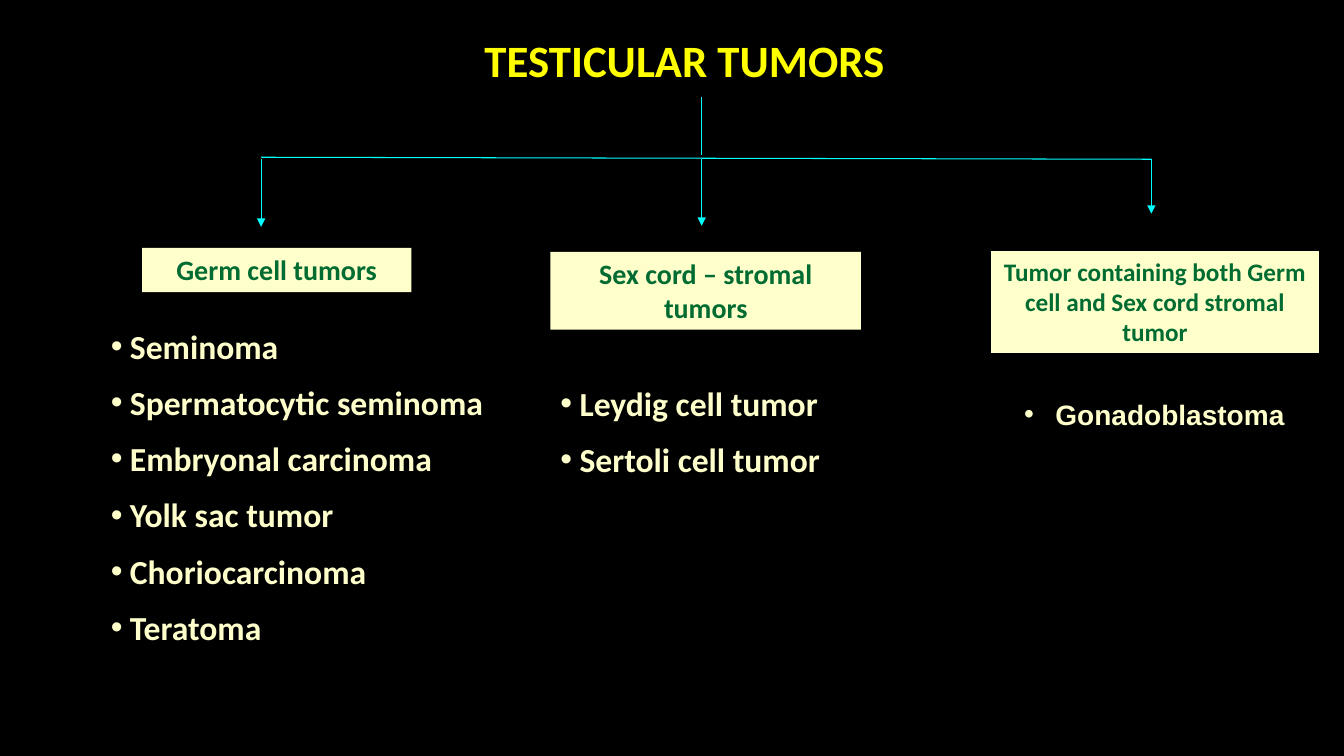
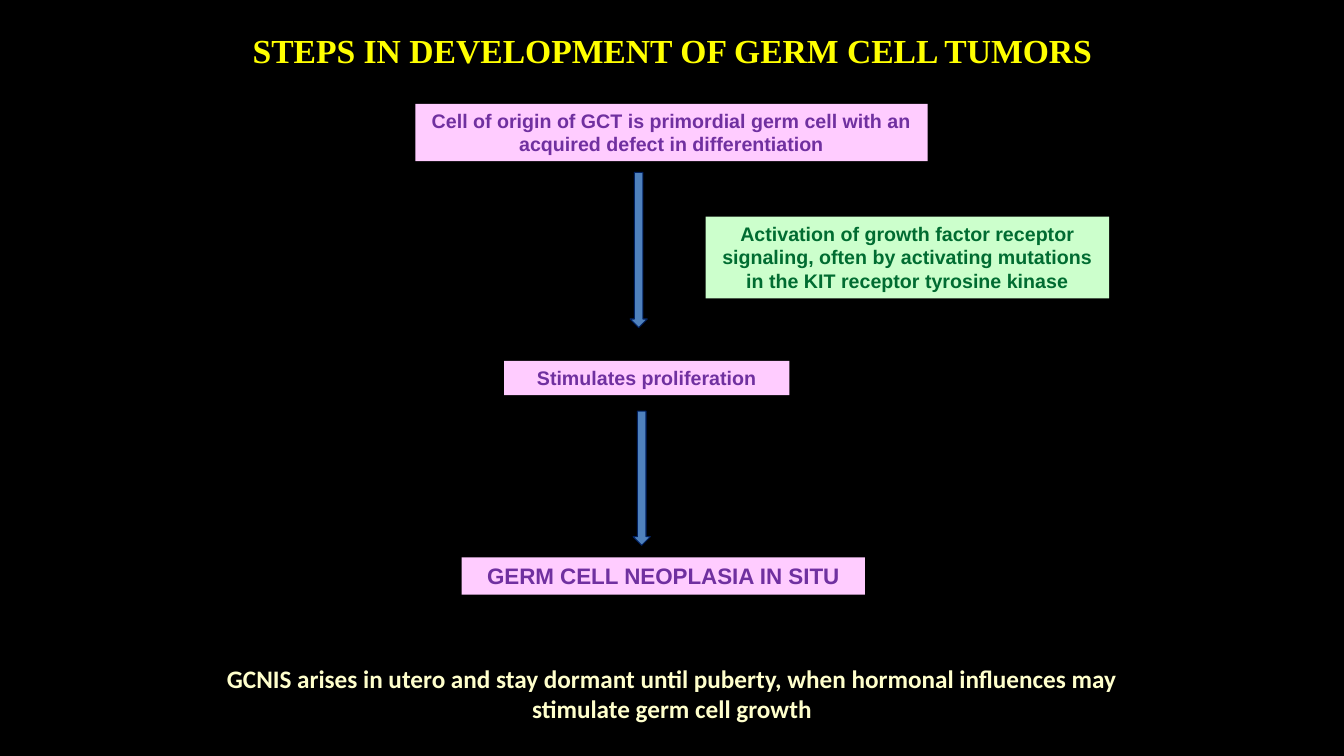
from lxml import etree
from pptx import Presentation
from pptx.dml.color import RGBColor
from pptx.enum.shapes import MSO_CONNECTOR, MSO_SHAPE
from pptx.enum.text import MSO_ANCHOR, MSO_AUTO_SIZE, PP_ALIGN
from pptx.oxml.ns import qn
from pptx.util import Inches, Pt

# Shared palette and fonts
BLACK, YELLOW, CREAM, CYAN = "000000", "FFFF00", "FFFFCC", "00FFFF"
GREEN, MINT, PURPLE, PINK = "006C31", "CCFFCC", "7030A0", "FFCCFF"
BLUE, NAVY = "4F81BD", "002060"
SANS, BODY, SERIF = "Arial", "Calibri", "Times New Roman"
TITLE_ONLY = 5


def rgb(value):
    return RGBColor.from_string(value)


def inches(box):
    return [Inches(v) for v in box]


def add_bullet(p, indent):
    """Give a paragraph a round bullet and a hanging indent."""
    pPr = p._p.get_or_add_pPr()
    pPr.set("marL", str(Inches(indent)))
    pPr.set("indent", str(-Inches(indent)))
    etree.SubElement(pPr, qn("a:buFont")).set("typeface", SANS)
    etree.SubElement(pPr, qn("a:buChar")).set("char", "•")


def write(tf, lines, size=20, font=BODY, color=CREAM, align=PP_ALIGN.CENTER,
          anchor=MSO_ANCHOR.TOP, bullet=None, gap=0, spacing=None):
    """Fill a text frame with bold paragraphs, one per line."""
    tf.word_wrap = True
    tf.auto_size = MSO_AUTO_SIZE.NONE
    tf.vertical_anchor = anchor
    for i, line in enumerate(lines):
        p = tf.add_paragraph() if i else tf.paragraphs[0]
        p.alignment = align
        if i and gap:
            p.space_before = Pt(gap)
        if spacing:
            p.line_spacing = spacing
        if bullet:
            add_bullet(p, bullet)
        r = p.add_run()
        r.text = line
        r.font.size, r.font.name, r.font.bold = Pt(size), font, True
        r.font.color.rgb = rgb(color)


def add_text(slide, box, lines, **fmt):
    write(slide.shapes.add_textbox(*inches(box)).text_frame, lines, **fmt)


def add_shape(slide, kind, box, fill, line=None):
    sp = slide.shapes.add_shape(kind, *inches(box))
    sp.shadow.inherit = False
    sp.fill.solid()
    sp.fill.fore_color.rgb = rgb(fill)
    if line:
        sp.line.color.rgb = rgb(line)
        sp.line.width = Pt(0.75)
    else:
        sp.line.fill.background()
    return sp


def add_label(slide, box, text, fill, **fmt):
    sp = add_shape(slide, MSO_SHAPE.RECTANGLE, box, fill)
    write(sp.text_frame, [text], **fmt)


def add_line(slide, start, end, arrow=False):
    line = slide.shapes.add_connector(MSO_CONNECTOR.STRAIGHT,
                                      *inches(start + end))
    line.line.color.rgb = rgb(CYAN)
    line.line.width = Pt(0.75)
    spPr = line._element.spPr
    if arrow:
        etree.SubElement(spPr.find(qn("a:ln")), qn("a:tailEnd")).set(
            "type", "triangle")
    etree.SubElement(spPr, qn("a:effectLst"))


def add_titled_slide(prs, title, box, **fmt):
    slide = prs.slides.add_slide(prs.slide_layouts[TITLE_ONLY])
    sp = slide.shapes.title
    sp.left, sp.top, sp.width, sp.height = inches(box)
    write(sp.text_frame, [title], color=YELLOW, anchor=MSO_ANCHOR.MIDDLE,
          spacing=0.9, **fmt)
    return slide


def add_branches(slide, left, middle, right, top):
    """Draw a stem, a crossbar and one arrow down to each column."""
    add_line(slide, (left, top - 0.02), (right, top))
    add_line(slide, (middle, top - 0.62), (middle, top - 0.04))
    for x, length in ((left, 0.67), (middle, 0.66), (right, 0.54)):
        add_line(slide, (x, top), (x, top + length), arrow=True)


def build_classification(prs):
    slide = add_titled_slide(prs, "TESTICULAR TUMORS", (2.29, 0, 9, 1.25),
                             size=32)
    add_branches(slide, 2.59, 6.96, 11.42, 1.58)

    # Column headings
    for box, text, size in (
        ((1.41, 2.46, 2.67, 0.44), "Germ cell tumors", 20),
        ((5.46, 2.5, 3.08, 0.77), "Sex cord – stromal tumors", 20),
        ((9.83, 2.49, 3.25, 1.01), "Tumor containing both Germ cell and "
                                   "Sex cord stromal tumor", 18),
    ):
        add_label(slide, box, text, CREAM, size=size, color=GREEN)

    # Tumor types under each heading
    types = dict(size=24, align=PP_ALIGN.LEFT, bullet=0.19, gap=11.4)
    add_text(slide, (1, 3.18, 4.28, 3.53),
             ["Seminoma", "Spermatocytic seminoma", "Embryonal carcinoma",
              "Yolk sac tumor", "Choriocarcinoma", "Teratoma"], **types)
    add_text(slide, (5.46, 3.75, 3.08, 1.11),
             ["Leydig cell tumor", "Sertoli cell tumor"], **types)
    add_text(slide, (10.06, 3.89, 3.02, 0.44), ["Gonadoblastoma"],
             font=SANS, align=PP_ALIGN.LEFT, bullet=0.31)


def build_development(prs):
    slide = add_titled_slide(prs, "STEPS IN DEVELOPMENT OF GERM CELL TUMORS",
                             (2.17, 0.04, 9, 0.96), size=24, font=SERIF)

    # Steps and the side note
    for box, text, size, fill, color in (
        ((4.12, 1.03, 5.08, 0.57),
         "Cell of origin of GCT is primordial germ cell with an acquired "
         "defect in differentiation", 14, PINK, PURPLE),
        ((5, 3.58, 2.83, 0.34), "Stimulates proliferation", 14, PINK, PURPLE),
        ((4.58, 5.53, 4, 0.37), "GERM CELL NEOPLASIA IN SITU", 16, PINK,
         PURPLE),
        ((7, 2.15, 4, 0.81),
         "Activation of growth factor receptor signaling, often by "
         "activating mutations in the KIT receptor tyrosine kinase", 14,
         MINT, GREEN),
    ):
        add_label(slide, box, text, fill, size=size, font=SANS, color=color)

    # Arrows between steps
    for box in ((6.25, 1.71, 0.17, 1.54), (6.28, 4.08, 0.17, 1.33)):
        add_shape(slide, MSO_SHAPE.DOWN_ARROW, box, BLUE, line=NAVY)

    # Closing remark
    add_text(slide, (2.08, 6.53, 9.17, 0.71),
             ["GCNIS arises in utero and stay dormant until puberty, when "
              "hormonal influences may stimulate germ cell growth"], size=18)


def main():
    prs = Presentation()
    prs.slide_width, prs.slide_height = Inches(13.33), Inches(7.5)
    background = prs.slide_master.background.fill
    background.solid()
    background.fore_color.rgb = rgb(BLACK)
    build_classification(prs)
    build_development(prs)
    prs.save("out.pptx")


if __name__ == "__main__":
    main()
